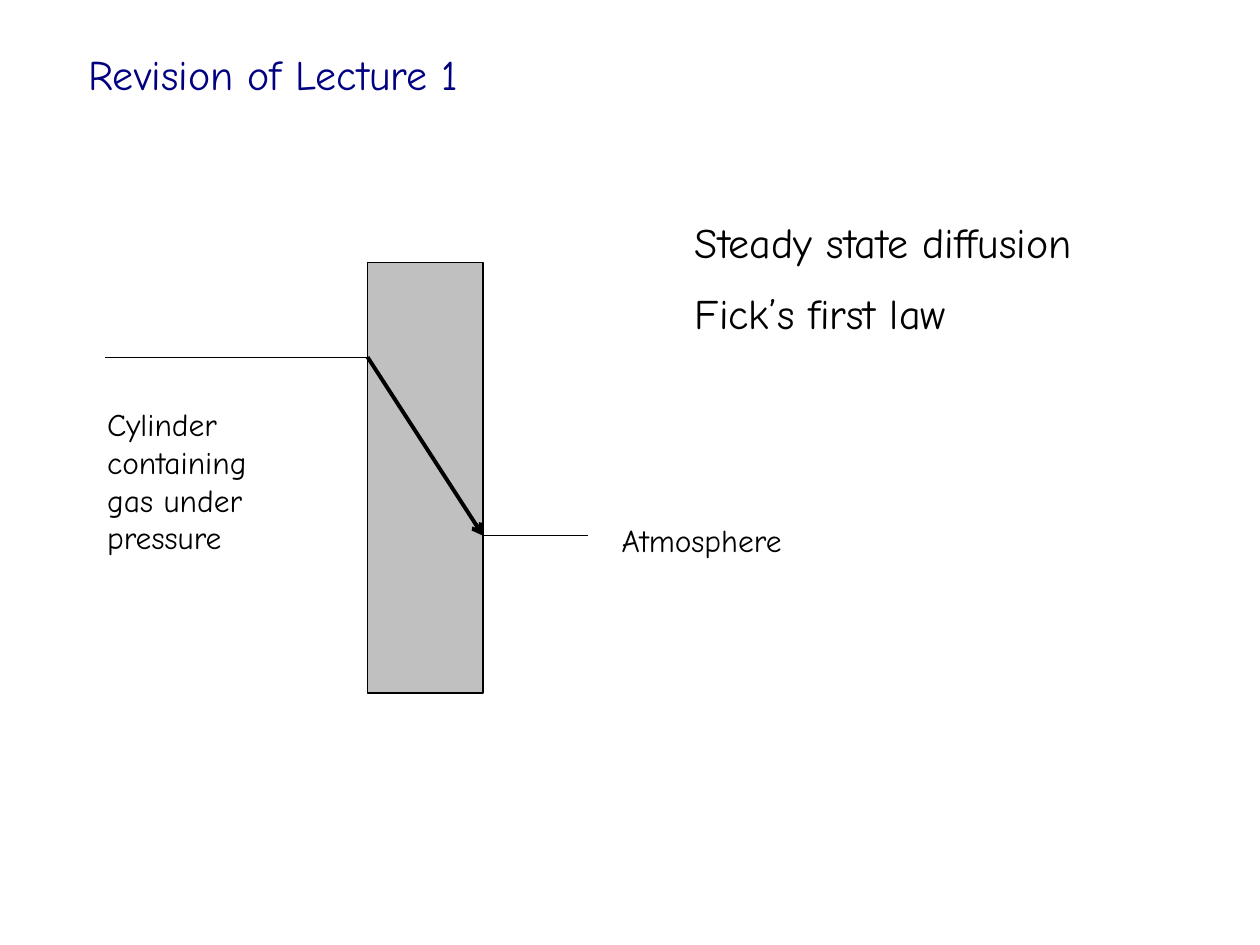
"""Build a slide revising steady state diffusion through a cylinder wall."""
from dataclasses import dataclass

import lxml.etree
import pptx
import pptx.dml.color
import pptx.enum.shapes
import pptx.enum.text
import pptx.oxml.ns
import pptx.slide
import pptx.util

Cm = pptx.util.Cm
Pt = pptx.util.Pt
RGB = pptx.dml.color.RGBColor
Align = pptx.enum.text.PP_ALIGN


@dataclass(frozen=True)
class Theme:
    font: str = "Comic Neue"
    title: RGB = RGB(0x00, 0x00, 0x80)
    ink: RGB = RGB(0x00, 0x00, 0x00)
    wall: RGB = RGB(0xC0, 0xC0, 0xC0)
    large: float = 24
    small: float = 18
    thin: float = 0.75
    thick: float = 2.25


THEME = Theme()


@dataclass(frozen=True)
class Label:
    lines: tuple[str, ...]
    left: float
    top: float
    width: float
    height: float
    size: float = THEME.small
    color: RGB = THEME.ink
    align: Align = Align.LEFT


@dataclass(frozen=True)
class Line:
    x1: float
    y1: float
    x2: float
    y2: float
    weight: float = THEME.thin
    arrow: bool = False


WALL_LEFT, WALL_TOP, WALL_WIDTH, WALL_HEIGHT = 7.41, 5.29, 2.33, 8.68
WALL_RIGHT = WALL_LEFT + WALL_WIDTH
GAS_LEVEL, AIR_LEVEL = 7.2, 10.8

PROFILE = (
    Line(2.12, GAS_LEVEL, WALL_LEFT, GAS_LEVEL),
    Line(WALL_LEFT, GAS_LEVEL, WALL_RIGHT, AIR_LEVEL, THEME.thick, True),
    Line(WALL_RIGHT, AIR_LEVEL, 11.85, AIR_LEVEL),
)

LABELS = (
    Label(("Revision of Lecture 1",), 0.64, 0.85, 9.74, 1.27,
          THEME.large, THEME.title, Align.CENTER),
    Label(("Steady state diffusion", "Fick’s first law"),
          13.76, 4.23, 10.16, 2.79, THEME.large),
    Label(("Cylinder containing gas under pressure",), 1.91, 8.04, 3.81, 3.3),
    Label(("Atmosphere",), 12.28, 10.37, 4.66, 1.02),
)


def draw_wall(slide: pptx.slide.Slide) -> None:
    """Draw the wall between the gas and the atmosphere."""
    sp = slide.shapes.add_shape(
        pptx.enum.shapes.MSO_SHAPE.RECTANGLE,
        Cm(WALL_LEFT), Cm(WALL_TOP), Cm(WALL_WIDTH), Cm(WALL_HEIGHT))
    sp.shadow.inherit = False
    sp.fill.solid()
    sp.fill.fore_color.rgb = THEME.wall
    sp.line.color.rgb = THEME.ink
    sp.line.width = Pt(THEME.thin)


def draw_line(slide: pptx.slide.Slide, line: Line) -> None:
    """Draw one segment of the concentration profile."""
    sp = slide.shapes.add_connector(
        pptx.enum.shapes.MSO_CONNECTOR.STRAIGHT,
        Cm(line.x1), Cm(line.y1), Cm(line.x2), Cm(line.y2))
    sp.line.color.rgb = THEME.ink
    sp.line.width = Pt(line.weight)
    qn = pptx.oxml.ns.qn
    if line.arrow:
        ln = sp.line._get_or_add_ln()
        lxml.etree.SubElement(ln, qn("a:tailEnd"), type="arrow")
    lxml.etree.SubElement(sp._element.spPr, qn("a:effectLst"))


def draw_label(slide: pptx.slide.Slide, label: Label) -> None:
    """Draw one text box, with half a line between its paragraphs."""
    sp = slide.shapes.add_textbox(
        Cm(label.left), Cm(label.top), Cm(label.width), Cm(label.height))
    tf = sp.text_frame
    tf.word_wrap = True
    tf.auto_size = pptx.enum.text.MSO_AUTO_SIZE.SHAPE_TO_FIT_TEXT
    tf.text = "\n".join(label.lines)
    for i, p in enumerate(tf.paragraphs):
        p.alignment = label.align
        p.space_before = Pt(label.size / 2 if i else 0)
        for r in p.runs:
            r.font.name = THEME.font
            r.font.size = Pt(label.size)
            r.font.color.rgb = label.color


def main() -> None:
    """Build and save the slide."""
    prs = pptx.Presentation()
    prs.slide_width, prs.slide_height = Cm(25.4), Cm(19.05)
    slide = prs.slides.add_slide(prs.slide_layouts[6])
    draw_wall(slide)
    for line in PROFILE:
        draw_line(slide, line)
    for label in LABELS:
        draw_label(slide, label)
    prs.save("out.pptx")


if __name__ == "__main__":
    main()
